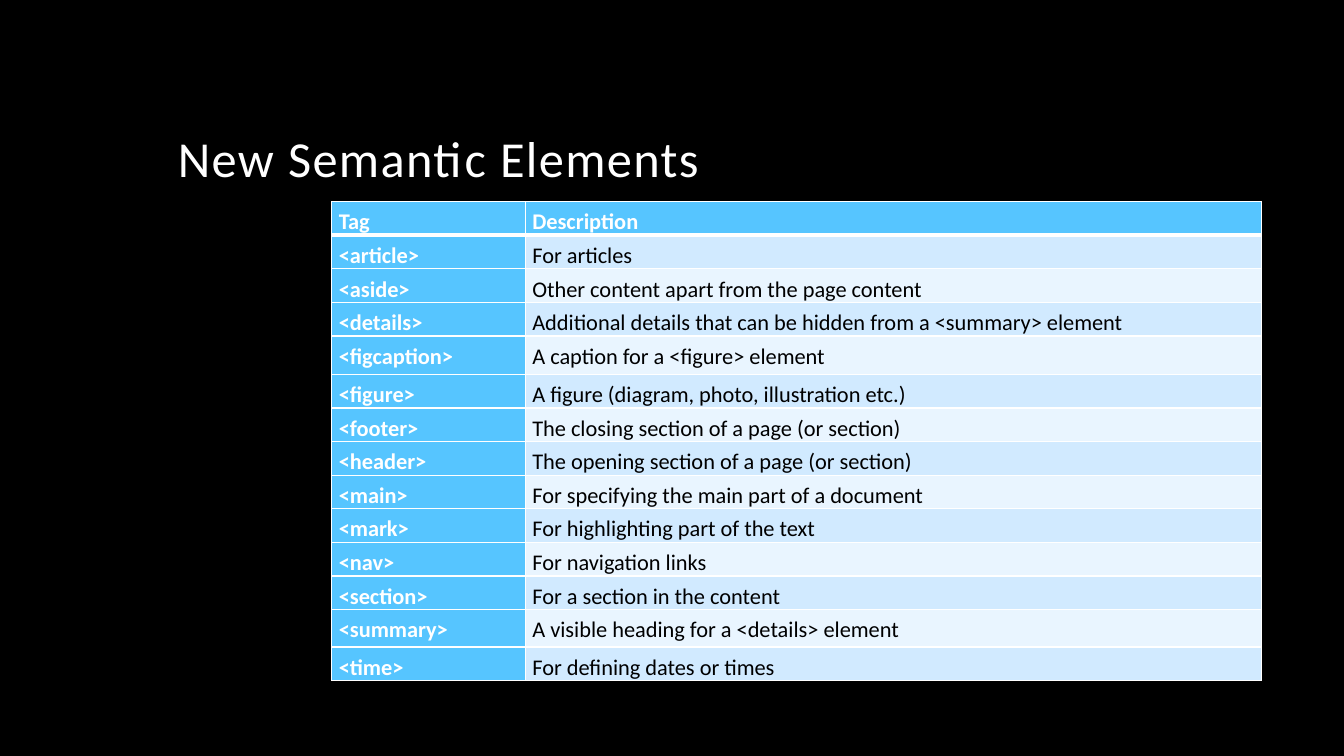
from lxml.etree import SubElement
from pptx import Presentation
from pptx.dml.color import RGBColor
from pptx.enum.text import MSO_ANCHOR as Anchor, PP_ALIGN as Align
from pptx.oxml.ns import qn
from pptx.util import Inches, Pt

TITLE = "New Semantic Elements"
ROWS = [
    ("Tag", "Description"),
    ("<article>", "For articles"),
    ("<aside>", "Other content apart from the page content"),
    ("<details>", "Additional details that can be hidden from a <summary> element"),
    ("<figcaption>", "A caption for a <figure> element"),
    ("<figure>", "A figure (diagram, photo, illustration etc.)"),
    ("<footer>", "The closing section of a page (or section)"),
    ("<header>", "The opening section of a page (or section)"),
    ("<main>", "For specifying the main part of a document"),
    ("<mark>", "For highlighting part of the text"),
    ("<nav>", "For navigation links"),
    ("<section>", "For a section in the content"),
    ("<summary>", "A visible heading for a <details> element"),
    ("<time>", "For defining dates or times"),
]
TALL = {"<figcaption>": 0.38, "<summary>": 0.37}
COLS = (1.92, 7.3)
ROW = 0.31
FONT = "Calibri"
BLACK = RGBColor(0, 0, 0)
WHITE = RGBColor(255, 255, 255)
BLUE = RGBColor(0x56, 0xC5, 0xFF)
BANDS = (RGBColor(0xE9, 0xF5, 0xFF), RGBColor(0xD1, 0xEA, 0xFF))


def put(frame, text, size=16, color=WHITE, bold=False, align=Align.JUSTIFY, lead=1.25, gap=0):
    """Write one formatted paragraph into a text frame."""
    para = frame.paragraphs[0]
    para.alignment = align
    para.line_spacing = lead
    run = para.add_run()
    run.text = text
    font = run.font
    font.name, font.size, font.bold = FONT, Pt(size), bold
    font.color.rgb = color
    if gap:
        run._r.get_or_add_rPr().set("spc", str(gap * 100))


def edge(cell, side, width):
    """Draw one white border of a table cell."""
    line = SubElement(cell._tc.get_or_add_tcPr(), qn("a:ln" + side), w=str(Pt(width)))
    fill = SubElement(line, qn("a:solidFill"))
    SubElement(fill, qn("a:srgbClr"), val=str(WHITE))


def add_title(slide):
    """Place the slide title."""
    wide, high = Inches(13.33), Inches(7.5)
    box = slide.shapes.add_textbox(wide // 8, Inches(0.42), wide * 3 // 4, high // 5)
    frame = box.text_frame
    frame.word_wrap = True
    frame.vertical_anchor = Anchor.BOTTOM
    put(frame, TITLE, size=36, align=Align.LEFT, lead=0.9, gap=1)


def add_tags(slide):
    """Place the table of tags."""
    highs = [TALL.get(tag, ROW) for tag, _ in ROWS]
    grid = slide.shapes.add_table(
        len(ROWS), len(COLS), Inches(3.29), Inches(2), Inches(sum(COLS)), Inches(sum(highs))
    ).table
    for col, width in zip(grid.columns, COLS):
        col.width = Inches(width)
    for r, (row, texts) in enumerate(zip(grid.rows, ROWS)):
        row.height = Inches(highs[r])
        for c, text in enumerate(texts):
            cell = grid.cell(r, c)
            head = r == 0 or c == 0
            cell.margin_left = cell.margin_right = Inches(0.07)
            cell.margin_top = cell.margin_bottom = 0
            widths = {"L": 1, "R": 1, "T": 3 if r == 1 else 1, "B": 3 if r == 0 else 1}
            for side, width in widths.items():
                edge(cell, side, width)
            cell.fill.solid()
            cell.fill.fore_color.rgb = BLUE if head else BANDS[r % 2]
            put(cell.text_frame, text, color=WHITE if head else BLACK, bold=head)


def main():
    """Build and save the slide."""
    deck = Presentation()
    deck.slide_width, deck.slide_height = Inches(13.33), Inches(7.5)
    slide = deck.slides.add_slide(deck.slide_layouts[6])
    back = slide.background.fill
    back.solid()
    back.fore_color.rgb = BLACK
    add_title(slide)
    add_tags(slide)
    deck.save("out.pptx")


if __name__ == "__main__":
    main()
